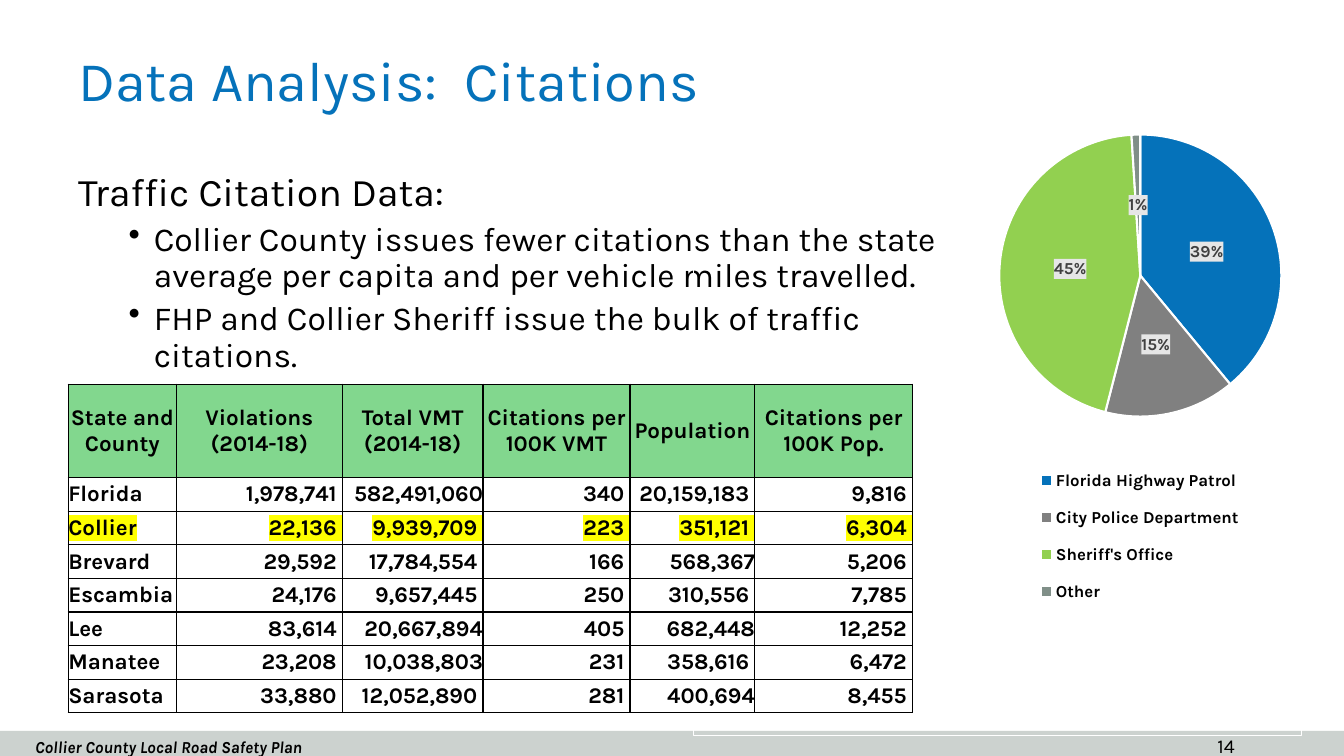
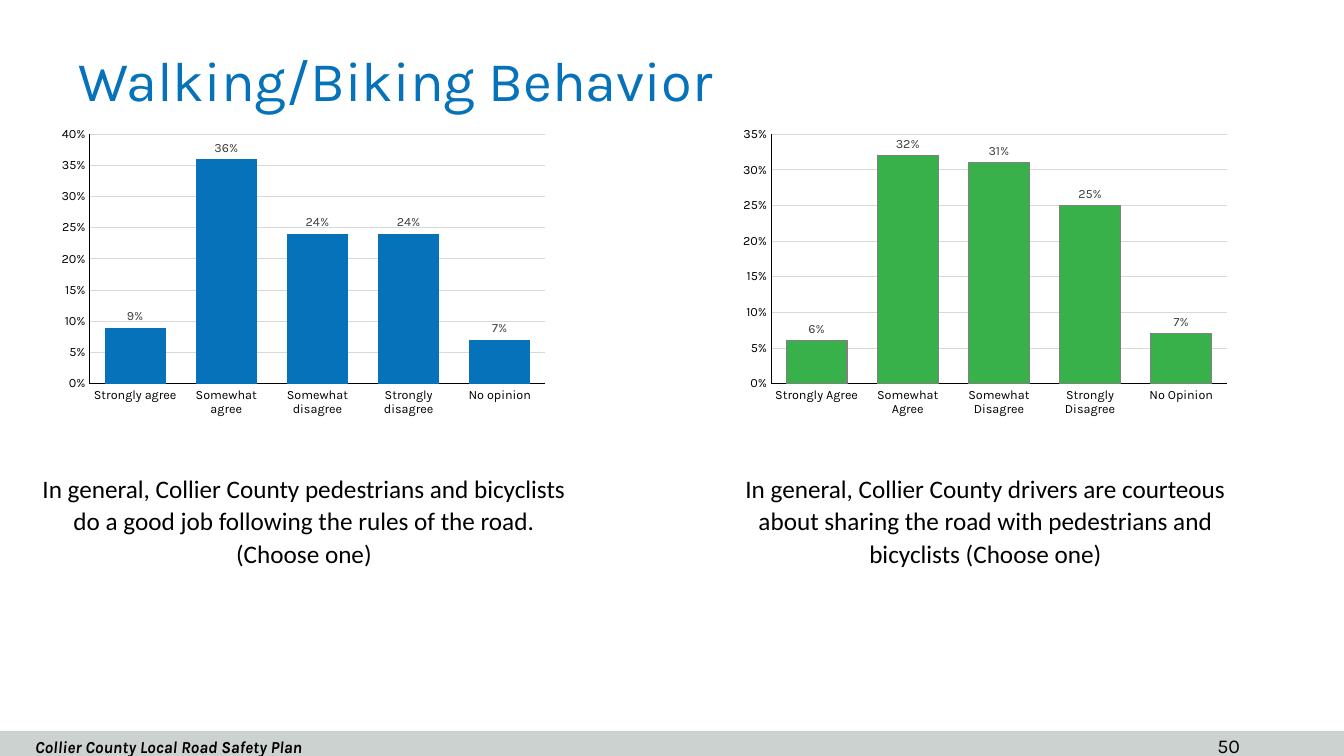
from pptx import Presentation
from pptx.chart.data import CategoryChartData as ChartData
from pptx.dml.color import RGBColor as Rgb
from pptx.enum.chart import XL_CHART_TYPE as ChartType, XL_LABEL_POSITION as LabelPos
from pptx.enum.chart import XL_LEGEND_POSITION as LegendPos, XL_TICK_MARK as Tick
from pptx.enum.shapes import MSO_SHAPE as Preset
from pptx.enum.text import MSO_ANCHOR as Anchor, PP_ALIGN as Align
from pptx.oxml import parse_xml
from pptx.oxml.ns import nsdecls
from pptx.util import Emu, Pt

COLORS = {
    "blue": "0572BA", "green": "39B14A", "lime": "92D050", "gray": "808080",
    "sage": "808F88", "band": "CCD2CF", "header": "82D78E", "highlight": "FFFF00",
    "grid": "D9D9D9", "label": "404040", "label_back": "E6E6E6",
    "black": "000000", "white": "FFFFFF",
}
FONT = "Karla"
SLIDE_W, SLIDE_H = 1280, 720
BAND_TOP = 696


def px(length):
    return Emu(length * 9525)


def rgb(name):
    return Rgb.from_string(COLORS[name])


def set_font(font, size, color="black", bold=False, italic=False, name=FONT):
    font.name, font.size, font.bold, font.italic = name, Pt(size), bold, italic
    font.color.rgb = rgb(color)


def set_line(line, color, width=0.75):
    line.color.rgb = rgb(color)
    line.width = Pt(width)


def solid(color):
    return f'<a:solidFill><a:srgbClr val="{COLORS[color]}"/></a:solidFill>'


def add_text(slide, box, text, size, align=Align.LEFT, spacing=1.0, anchor=Anchor.TOP, **style):
    frame = slide.shapes.add_textbox(*map(px, box)).text_frame
    frame.word_wrap = True
    frame.vertical_anchor = anchor
    paragraph = frame.paragraphs[0]
    paragraph.text = text
    paragraph.alignment = align
    paragraph.line_spacing = spacing
    set_font(paragraph.font, size, **style)
    return frame


def add_page(deck, title, number):
    slide = deck.slides.add_slide(deck.slide_layouts[6])
    band = slide.shapes.add_shape(
        Preset.RECTANGLE, *map(px, (0, BAND_TOP, SLIDE_W, SLIDE_H - BAND_TOP)))
    band.shadow.inherit = False
    band.fill.solid()
    band.fill.fore_color.rgb = rgb("band")
    band.line.fill.background()
    add_text(slide, (65, 46, 1019, 50), title, 40, spacing=0.9, color="blue")
    add_text(slide, (24, 701, 790, 21), "Collier County Local Road Safety Plan", 12,
             anchor=Anchor.MIDDLE, bold=True, italic=True)
    add_text(slide, (1150, 694, 55, 38), str(number), 14)
    return slide


def add_points(slide, box, heading, points):
    frame = add_text(slide, box, heading, 28, spacing=0.9)
    for point in points:
        paragraph = frame.add_paragraph()
        paragraph.text = point
        paragraph.line_spacing = 0.9
        paragraph.space_before = Pt(5)
        properties = paragraph._p.get_or_add_pPr()
        properties.set("marL", str(px(72)))
        properties.set("indent", str(px(-24)))
        properties.append(parse_xml(f'<a:buChar {nsdecls("a")} char="•"/>'))
        set_font(paragraph.font, 24)


def add_chart(slide, kind, box, categories, values):
    data = ChartData(number_format="0%")
    data.categories = categories
    data.add_series("Series 1", values)
    chart = slide.shapes.add_chart(kind, *map(px, box), data).chart
    chart.has_title = chart.has_legend = False
    set_font(chart.font, 10)
    return chart


def add_labels(series, position, size, bold=False):
    labels = series.data_labels
    labels.show_value = True
    labels.number_format = "0%"
    labels.number_format_is_linked = False
    labels.position = position
    set_font(labels.font, size, "label", bold)


def frame_chart(chart, fill, line):
    chart.element.xpath("c:chart")[0].addnext(parse_xml(
        f'<c:spPr {nsdecls("c", "a")}>{fill}<a:ln w="9525">{line}</a:ln></c:spPr>'))


def chart_layout(x, y, w, h, target=""):
    parts = "".join(f'<c:{key} val="{value}"/>' for key, value in (
        ("xMode", "edge"), ("yMode", "edge"), ("x", x), ("y", y), ("w", w), ("h", h)))
    return parse_xml(f'<c:layout {nsdecls("c")}><c:manualLayout>{target}{parts}'
                     '</c:manualLayout></c:layout>')


def add_agency_pie(slide, box, shares):
    chart = add_chart(slide, ChartType.PIE, box,
                      [agency for agency, _, _ in shares],
                      [share for _, share, _ in shares])
    plot = chart.plots[0]
    plot.vary_by_categories = True
    series = plot.series[0]
    for index, (_, _, color) in enumerate(shares):
        slice_format = series.points[index].format
        slice_format.fill.solid()
        slice_format.fill.fore_color.rgb = rgb(color)
        set_line(slice_format.line, "white", 1.5)
    add_labels(series, LabelPos.CENTER, 12, bold=True)
    chart.element.xpath(".//c:ser/c:dLbls/c:txPr")[0].addprevious(parse_xml(
        f'<c:spPr {nsdecls("c", "a")}>{solid("label_back")}</c:spPr>'))

    chart.has_legend = True
    chart.legend.position = LegendPos.RIGHT
    chart.legend.include_in_layout = False
    set_font(chart.legend.font, 12, bold=True)
    for old in chart.element.xpath(".//c:plotArea/c:layout | .//c:legend/c:layout"):
        old.getparent().remove(old)
    chart.element.xpath(".//c:plotArea")[0].insert(
        0, chart_layout(0.5, 0.02, 0.47, 0.46, '<c:layoutTarget val="inner"/>'))
    chart.element.xpath(".//c:legendPos")[0].addnext(chart_layout(0.56, 0.54, 0.35, 0.27))
    frame_chart(chart, "<a:noFill/>", solid("white"))


def fill_cell(cell, text, align, fill, bold_highlight=False):
    cell.margin_left = cell.margin_right = cell.margin_top = cell.margin_bottom = 0
    cell.vertical_anchor = Anchor.MIDDLE
    properties = cell._tc.get_or_add_tcPr()
    for side in "LRTB":
        properties.append(parse_xml(
            f'<a:ln{side} {nsdecls("a")} w="12700">{solid("black")}</a:ln{side}>'))
    cell.fill.solid()
    cell.fill.fore_color.rgb = rgb(fill)
    paragraph = cell.text_frame.paragraphs[0]
    paragraph.alignment = align
    run = paragraph.add_run()
    run.text = text
    set_font(paragraph.font, 16, bold=True)
    if bold_highlight:
        run._r.get_or_add_rPr().append(parse_xml(
            f'<a:highlight {nsdecls("a")}><a:srgbClr val="{COLORS["highlight"]}"/></a:highlight>'))


def add_citation_table(slide, left, top, widths, header, rows, focus):
    header_height, row_height = 89, 32
    height = header_height + row_height * len(rows)
    table = slide.shapes.add_table(len(rows) + 1, len(header),
                                   *map(px, (left, top, sum(widths), height))).table
    table.first_row = table.horz_banding = False
    for column, width in zip(table.columns, widths):
        column.width = px(width)
    for index, row in enumerate(table.rows):
        row.height = px(row_height if index else header_height)
    for column, caption in enumerate(header):
        fill_cell(table.cell(0, column), caption, Align.CENTER, "header")
    for index, row in enumerate(rows, 1):
        for column, value in enumerate(row):
            fill_cell(table.cell(index, column), value, Align.RIGHT if column else Align.LEFT,
                      "white", row[0] == focus)


def add_survey(slide, left, question, answers, values, top_value, color, outline=None):
    chart = add_chart(slide, ChartType.COLUMN_CLUSTERED, (left + 25, 115, 480, 288),
                      answers, values)
    frame_chart(chart, solid("white"), "<a:noFill/>")
    plot = chart.plots[0]
    plot.vary_by_categories = False
    plot.gap_width, plot.overlap = 50, -24
    series = plot.series[0]
    series.format.fill.solid()
    series.format.fill.fore_color.rgb = rgb(color)
    if outline:
        set_line(series.format.line, outline)
    add_labels(series, LabelPos.OUTSIDE_END, 9)
    for axis in (chart.category_axis, chart.value_axis):
        axis.major_tick_mark = axis.minor_tick_mark = Tick.NONE
        set_font(axis.tick_labels.font, 9)
        set_line(axis.format.line, "black")
    scale = chart.value_axis
    scale.minimum_scale, scale.maximum_scale, scale.major_unit = 0, top_value, 0.05
    scale.tick_labels.number_format = "0%"
    scale.tick_labels.number_format_is_linked = False
    scale.has_major_gridlines = True
    set_line(scale.major_gridlines.format.line, "grid")
    add_text(slide, (left, 444, 531, 102), question, 18, Align.CENTER, 1.07, name="Calibri")


def build_citations(deck):
    slide = add_page(deck, "Data Analysis:  Citations", 14)
    add_points(slide, (65, 160, 862, 488), "Traffic Citation Data:", [
        "Collier County issues fewer citations than the state average per capita "
        "and per vehicle miles travelled.",
        "FHP and Collier Sheriff issue the bulk of traffic citations.",
    ])
    add_agency_pie(slide, (660, 116, 580, 585), [
        ("Florida Highway Patrol", 0.39, "blue"),
        ("City Police Department", 0.15, "gray"),
        ("Sheriff's Office", 0.45, "lime"),
        ("Other", 0.01, "sage"),
    ])
    add_citation_table(
        slide, 65, 366, (103, 158, 134, 140, 119, 150),
        ("State and County", "Violations (2014-18)", "Total VMT (2014-18)",
         "Citations per 100K VMT", "Population", "Citations per 100K Pop."),
        [
            ("Florida", "1,978,741 ", "582,491,060", "340 ", "20,159,183 ", "9,816 "),
            ("Collier", "22,136 ", "9,939,709 ", "223 ", "351,121 ", "6,304 "),
            ("Brevard", "29,592 ", "17,784,554 ", "166 ", "568,367", "5,206 "),
            ("Escambia", "24,176 ", "9,657,445 ", "250 ", "310,556 ", "7,785 "),
            ("Lee", "83,614 ", "20,667,894", "405 ", "682,448", "12,252 "),
            ("Manatee", "23,208 ", "10,038,803", "231 ", "358,616 ", "6,472 "),
            ("Sarasota", "33,880 ", "12,052,890 ", "281 ", "400,694", "8,455 "),
        ], focus="Collier")


def build_behavior(deck):
    slide = add_page(deck, "Walking/Biking Behavior", 50)
    answers = ["Strongly agree", "Somewhat agree", "Somewhat disagree",
               "Strongly disagree", "No opinion"]
    add_survey(slide, 24,
               "In general, Collier County pedestrians and bicyclists do a good job "
               "following the rules of the road. (Choose one)",
               answers, (0.09, 0.36, 0.24, 0.24, 0.07), 0.4, "blue")
    add_survey(slide, 673,
               "In general, Collier County drivers are courteous about sharing the road "
               "with pedestrians and bicyclists (Choose one)",
               [answer.title() for answer in answers],
               (0.06, 0.32, 0.31, 0.25, 0.07), 0.35, "green", "gray")


def main():
    deck = Presentation()
    deck.slide_width, deck.slide_height = px(SLIDE_W), px(SLIDE_H)
    build_citations(deck)
    build_behavior(deck)
    deck.save("out.pptx")


if __name__ == "__main__":
    main()
